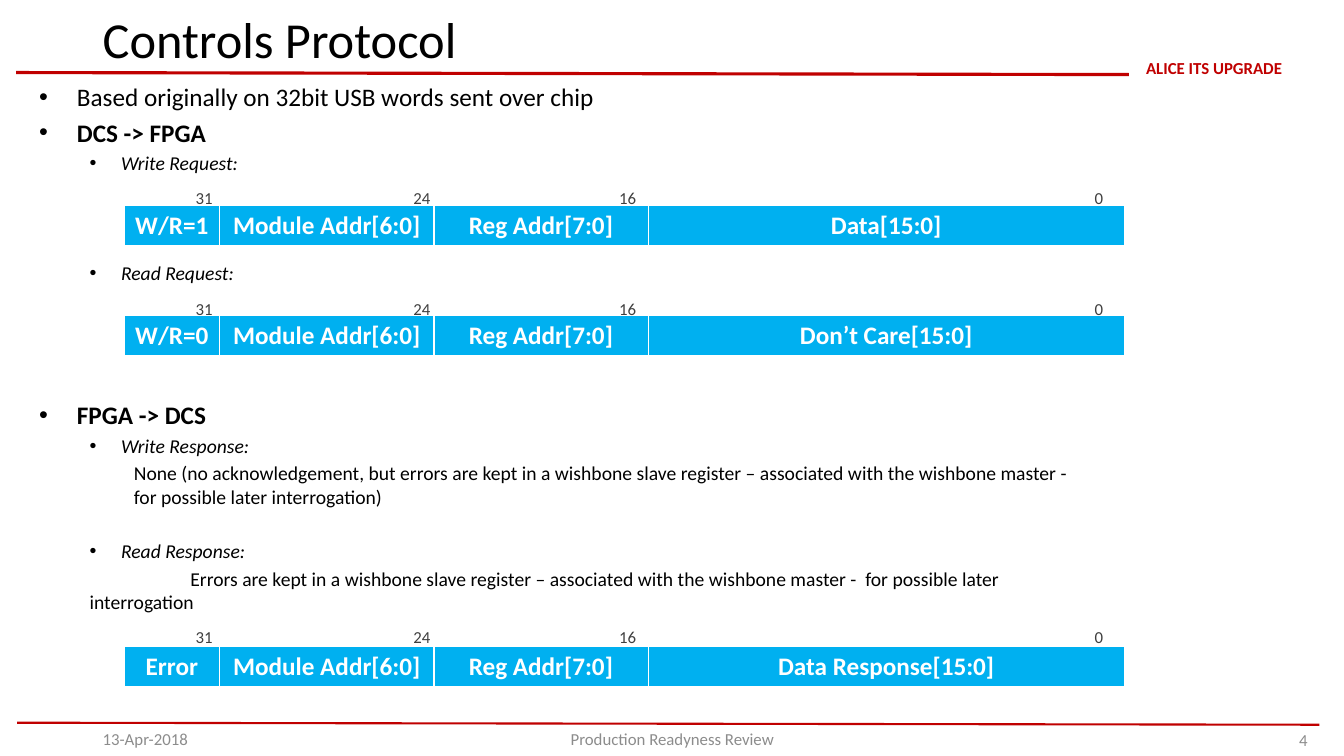
import pptx
import pptx.dml.color
import pptx.enum.shapes
import pptx.enum.text
import pptx.oxml
import pptx.oxml.ns
import pptx.util

RGBColor = pptx.dml.color.RGBColor
RED = RGBColor(0xC0, 0x00, 0x00)
BLUE = RGBColor(0x00, 0xB0, 0xF0)
WHITE = RGBColor(0xFF, 0xFF, 0xFF)
BLACK = RGBColor(0x00, 0x00, 0x00)
GREY = RGBColor(0x8C, 0x8C, 0x8C)
DARK = RGBColor(0x3F, 0x3F, 0x3F)

ALIGN = pptx.enum.text.PP_ALIGN
ANCHOR = pptx.enum.text.MSO_ANCHOR

FIELD_COLUMNS = (11.4, 25.5, 25.5, 56.7)
BIT_LABELS = ("31", "24", "16", "0")
BIT_STOPS = (25.9, 50.4, 107)
WORDS = (
    (22.32, 24.48, "W/R=1", "Data[15:0]"),
    (35.52, 37.56, "W/R=0", "Don’t Care[15:0]"),
    (74.6, 77, "Error", "Data Response[15:0]"),
)

HEADING = dict(level=0, size=18, margin=4.5, indent=-4.5, bullet=True)
TOPIC = dict(level=1, size=14, margin=9.75, indent=-3.75, bullet=True, italic=True)
NOTE = dict(level=2, size=14, margin=11.28, indent=0)
ANSWER = dict(level=1, size=14, margin=6, indent=12)
OUTLINE = (
    ("Based originally on 32bit USB words sent over chip", HEADING, 0),
    ("DCS -> FPGA", dict(HEADING, bold=True), 3.6),
    ("Write Request:", TOPIC, 2.8),
    ("Read Request:", TOPIC, 62),
    ("FPGA -> DCS", dict(HEADING, bold=True), 82),
    ("Write Response:", TOPIC, 2.8),
    ("None (no acknowledgement, but errors are kept in a wishbone slave register – "
     "associated with the wishbone master -  for possible later interrogation)", NOTE, 2.8),
    ("Read Response:", TOPIC, 22),
    ("Errors are kept in a wishbone slave register – associated with the wishbone "
     "master -  for possible later interrogation", ANSWER, 2.8),
)


class ProtocolSlide:
    """Draws on one slide with a 160 by 90 grid and a single typeface."""

    font_name = "Calibri"

    def __init__(self, deck):
        self.column = deck.slide_width / 160
        self.row = deck.slide_height / 90
        self.slide = deck.slides.add_slide(deck.slide_layouts[6])

    def x(self, columns):
        return round(columns * self.column)

    def y(self, rows):
        return round(rows * self.row)

    def element(self, parent, tag, **attributes):
        child = pptx.oxml.ns.qn(tag)
        node = parent.makeelement(child, {key: str(value) for key, value in attributes.items()})
        parent.append(node)
        return node

    def rule(self, start, end, width):
        line = self.slide.shapes.add_connector(
            pptx.enum.shapes.MSO_CONNECTOR.STRAIGHT,
            self.x(start[0]), self.y(start[1]), self.x(end[0]), self.y(end[1]))
        line.line.color.rgb = RED
        line.line.width = pptx.util.Pt(width)
        self.element(line._element.spPr, "a:effectLst")

    def run(self, paragraph, words, size, color, bold=False, italic=False):
        run = paragraph.add_run()
        run.text = words
        run.font.name = self.font_name
        run.font.size = pptx.util.Pt(size)
        run.font.color.rgb = color
        run.font.bold = bold
        run.font.italic = italic

    def frame(self, left, top, width, height, anchor=ANCHOR.MIDDLE, inset=None):
        box = self.slide.shapes.add_textbox(
            self.x(left), self.y(top), self.x(width), self.y(height))
        frame = box.text_frame
        frame.word_wrap = True
        frame.vertical_anchor = anchor
        if inset is not None:
            frame.margin_left = frame.margin_right = self.x(inset)
            frame.margin_top = frame.margin_bottom = self.y(inset)
        return frame

    def label(self, words, area, size, color, align=ALIGN.LEFT, bold=False, inset=None):
        paragraph = self.frame(*area, inset=inset).paragraphs[0]
        paragraph.alignment = align
        self.run(paragraph, words, size, color, bold)
        return paragraph

    def outline(self, area, items):
        frame = self.frame(*area, anchor=ANCHOR.TOP)
        for number, (words, style, space) in enumerate(items):
            paragraph = frame.add_paragraph() if number else frame.paragraphs[0]
            paragraph.level = style["level"]
            if number:
                paragraph.space_before = pptx.util.Pt(space)
            properties = paragraph._p.get_or_add_pPr()
            properties.set("marL", str(self.x(style["margin"])))
            properties.set("indent", str(self.x(style["indent"])))
            if style.get("bullet"):
                self.element(properties, "a:buFont", typeface="Arial")
                self.element(properties, "a:buChar", char="•")
            else:
                self.element(properties, "a:buNone")
            self.run(paragraph, words, style["size"], BLACK,
                     style.get("bold", False), style.get("italic", False))

    def bit_numbers(self, top):
        paragraph = self.label("\t".join(BIT_LABELS), (22.8, top, 111, 2.4), 12, DARK, inset=0.5)
        stops = self.element(paragraph._p.get_or_add_pPr(), "a:tabLst")
        for stop in BIT_STOPS:
            self.element(stops, "a:tab", pos=self.x(stop), algn="l")

    def border(self, cell):
        properties = cell._tc.get_or_add_tcPr()
        for side, width in (("L", 1), ("R", 1), ("T", 1), ("B", 3)):
            line = self.element(properties, "a:ln" + side, w=pptx.util.Pt(width))
            fill = self.element(line, "a:solidFill")
            self.element(fill, "a:srgbClr", val=WHITE)

    def word_table(self, top, fields):
        table = self.slide.shapes.add_table(
            1, len(fields), self.x(14.76), self.y(top),
            self.x(sum(FIELD_COLUMNS)), self.y(4.92)).table
        table.first_row = False
        table.horz_banding = False
        for index, (field, width) in enumerate(zip(fields, FIELD_COLUMNS)):
            table.columns[index].width = self.x(width)
            cell = table.cell(0, index)
            self.border(cell)
            cell.fill.solid()
            cell.fill.fore_color.rgb = BLUE
            paragraph = cell.text_frame.paragraphs[0]
            paragraph.alignment = ALIGN.CENTER
            self.run(paragraph, field, 18, WHITE, bold=True)


def main():
    deck = pptx.Presentation()
    deck.slide_width = pptx.util.Inches(13.33)
    deck.slide_height = pptx.util.Inches(7.5)
    page = ProtocolSlide(deck)

    page.rule((1.92, 8.64), (134.4, 8.88), 2.25)
    page.rule((157.08, 86.28), (2.04, 86.04), 1.5)
    page.label("ALICE ITS UPGRADE", (135.96, 6.96, 17.16, 2.28), 12, RED,
               ALIGN.CENTER, bold=True, inset=0)
    title = page.label("Controls Protocol", (11.04, 0.72, 123.36, 8.64), 36, BLACK)
    title.line_spacing = 0.9
    page.label("13-Apr-2018", (11.04, 86.28, 36, 3.36), 12, GREY)
    page.label("Production Readyness Review", (53.04, 86.28, 54, 3.36), 12, GREY, ALIGN.CENTER)
    page.label("4", (138.6, 86.4, 18.24, 3.36), 12, GREY, ALIGN.RIGHT)
    page.outline((3.48, 9.12, 128.52, 63.36), OUTLINE)
    for bits_top, table_top, flag, payload in WORDS:
        page.word_table(table_top, (flag, "Module Addr[6:0]", "Reg Addr[7:0]", payload))
        page.bit_numbers(bits_top)

    deck.save("out.pptx")


if __name__ == "__main__":
    main()
